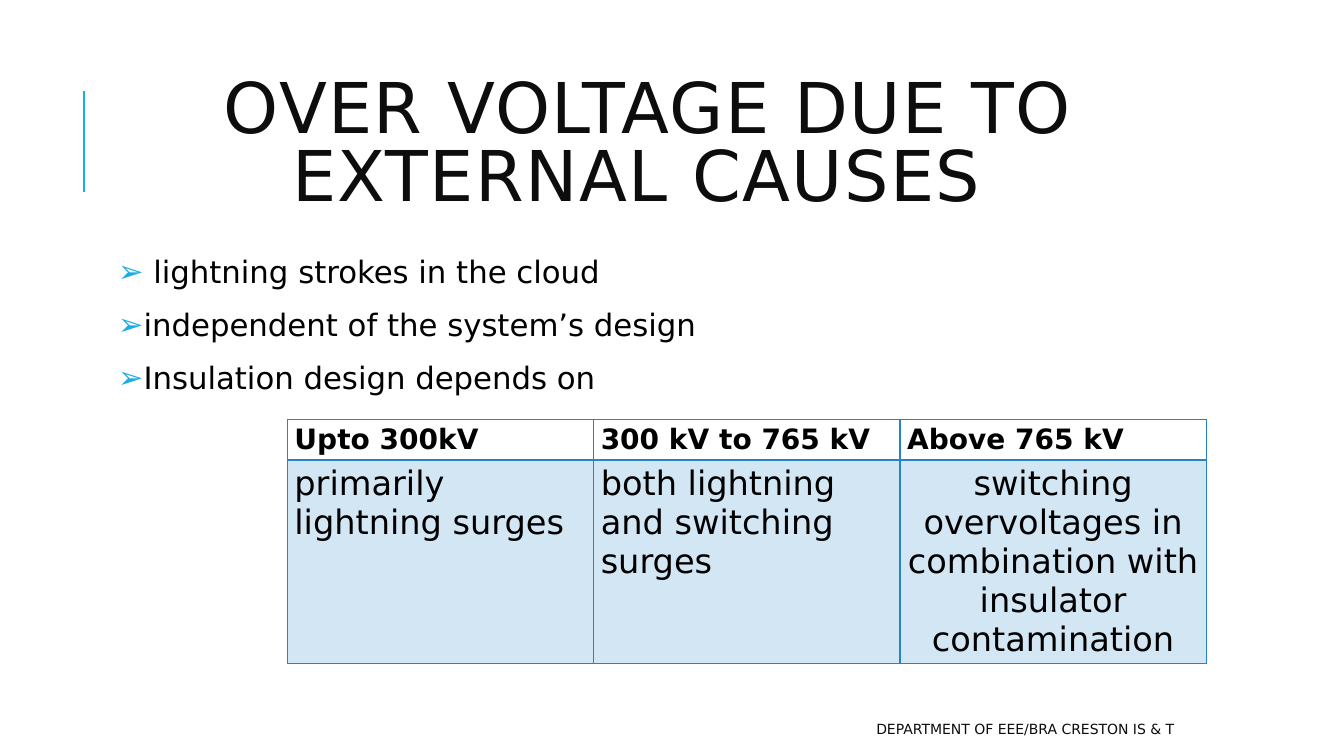
from dataclasses import dataclass

from lxml.etree import SubElement
from pptx import Presentation
from pptx.dml.color import RGBColor
from pptx.enum.shapes import MSO_CONNECTOR
from pptx.enum.text import MSO_ANCHOR, MSO_AUTO_SIZE, PP_ALIGN
from pptx.oxml import parse_xml
from pptx.oxml.ns import nsdecls, qn
from pptx.util import Cm, Pt

TITLE = "OVER VOLTAGE DUE TO EXTERNAL CAUSES "
CAUSES = [
    " lightning strokes in the cloud",
    "independent of the system’s design",
    "Insulation design depends on",
]
VOLTAGE_RANGES = ["Upto 300kV", "300 kV to 765 kV", "Above 765 kV"]
# Each cell: alignment and paragraphs
DESIGN_FACTORS = [
    (PP_ALIGN.LEFT, ["primarily lightning surges"]),
    (PP_ALIGN.LEFT, ["both lightning and switching surges"]),
    (PP_ALIGN.CENTER, ["switching overvoltages in combination with",
                       "insulator contamination"]),
]
FOOTER = "DEPARTMENT OF EEE/BRA CRESTON IS & T"


@dataclass(frozen=True)
class Theme:
    font: str = "DejaVu Sans"
    heading: str = "0D0D0D"
    text: str = "000000"
    accent: str = "1CADE4"
    grid: str = "2683C6"
    title_size: int = 50
    list_size: int = 22
    header_size: int = 20
    cell_size: int = 24
    footer_size: int = 10


THEME = Theme()
LEFT, CONTENT_WIDTH = 2.84, 27
COLUMN_WIDTH, ROW_HEIGHTS = 7.72, (1.02, 5.11)


def place(shape, left, top, width, height):
    shape.left, shape.top = Cm(left), Cm(top)
    shape.width, shape.height = Cm(width), Cm(height)


def add_run(paragraph, text, size, color, bold=False):
    run = paragraph.add_run()
    run.text = text
    run.font.name = THEME.font
    run.font.size = Pt(size)
    run.font.bold = bold
    run.font.color.rgb = RGBColor.from_string(color)
    return run


def paragraphs_for(frame, texts):
    """Yield a paragraph of the frame with each text."""
    for index, text in enumerate(texts):
        yield (frame.add_paragraph() if index else frame.paragraphs[0]), text


def add_bullet(paragraph):
    props = paragraph._p.get_or_add_pPr()
    props.set("marL", str(Cm(0.25)))
    props.set("indent", str(-Cm(0.25)))
    color = SubElement(props, qn("a:buClr"))
    SubElement(color, qn("a:srgbClr"), val=THEME.accent)
    SubElement(props, qn("a:buFont"), typeface=THEME.font)
    SubElement(props, qn("a:buChar"), char="➢")


def set_borders(cell, top, bottom):
    """Draw all four cell edges; top and bottom are widths in points."""
    edges = {"lnL": 1, "lnR": 1, "lnT": top, "lnB": bottom}
    props = cell._tc.get_or_add_tcPr()
    for position, (edge, width) in enumerate(edges.items()):
        props.insert(position, parse_xml(
            f'<a:{edge} {nsdecls("a")} w="{Pt(width)}"><a:solidFill>'
            f'<a:srgbClr val="{THEME.grid}"/></a:solidFill></a:{edge}>'))


def fill_cell(cell, align, texts, size, bold):
    cell.margin_left = cell.margin_right = Cm(0.18)
    cell.margin_top = cell.margin_bottom = Cm(0.1)
    for paragraph, text in paragraphs_for(cell.text_frame, texts):
        paragraph.alignment = align
        add_run(paragraph, text, size, THEME.text, bold)


def add_accent_line(slide):
    line = slide.shapes.add_connector(
        MSO_CONNECTOR.STRAIGHT, Cm(2.12), Cm(4.83), Cm(2.12), Cm(2.29))
    line.line.color.rgb = RGBColor.from_string(THEME.accent)
    line.line.width = Pt(1.5)
    SubElement(line._element.spPr, qn("a:effectLst"))


def add_title(slide):
    title = slide.shapes.title
    place(title, LEFT, 1.63, CONTENT_WIDTH, 4.17)
    frame = title.text_frame
    frame.auto_size = MSO_AUTO_SIZE.NONE
    frame.vertical_anchor = MSO_ANCHOR.MIDDLE
    heading = frame.paragraphs[0]
    heading.alignment = PP_ALIGN.CENTER
    heading.line_spacing = 0.8
    run = add_run(heading, TITLE, THEME.title_size, THEME.heading)
    run.font._element.set("spc", "100")


def add_causes(slide):
    body = slide.placeholders[1]
    place(body, LEFT, 6.35, CONTENT_WIDTH, 11.18)
    frame = body.text_frame
    frame.auto_size = MSO_AUTO_SIZE.NONE
    frame.margin_left = frame.margin_right = Cm(0.13)
    frame.margin_top = frame.margin_bottom = Cm(0.13)
    for paragraph, cause in paragraphs_for(frame, CAUSES):
        paragraph.line_spacing = 0.9
        paragraph.space_before, paragraph.space_after = Pt(12), Pt(2)
        add_bullet(paragraph)
        add_run(paragraph, cause, THEME.list_size, THEME.text)


def add_design_table(slide):
    columns = len(VOLTAGE_RANGES)
    table = slide.shapes.add_table(
        2, columns, Cm(7.24), Cm(10.57),
        Cm(COLUMN_WIDTH * columns), Cm(sum(ROW_HEIGHTS))).table
    table.horz_banding = table.first_row = False
    for row, height in zip(table.rows, ROW_HEIGHTS):
        row.height = Cm(height)
    for column, (voltage, (align, factors)) in enumerate(
            zip(VOLTAGE_RANGES, DESIGN_FACTORS)):
        table.columns[column].width = Cm(COLUMN_WIDTH)
        header, factor = table.cell(0, column), table.cell(1, column)
        fill_cell(header, PP_ALIGN.LEFT, [voltage], THEME.header_size, True)
        header.fill.background()
        set_borders(header, top=1, bottom=2)
        fill_cell(factor, align, factors, THEME.cell_size, False)
        factor.fill.solid()
        factor.fill.fore_color.rgb = RGBColor.from_string(THEME.grid)
        tint = factor._tc.tcPr.find(".//" + qn("a:srgbClr"))
        SubElement(tint, qn("a:alpha"), val="20000")
        set_borders(factor, top=2, bottom=1)


def add_footer(slide):
    footer = slide.shapes.add_textbox(Cm(13.46), Cm(17.98), Cm(16.38), Cm(0.76))
    frame = footer.text_frame
    frame.word_wrap = True
    frame.vertical_anchor = MSO_ANCHOR.MIDDLE
    frame.paragraphs[0].alignment = PP_ALIGN.RIGHT
    add_run(frame.paragraphs[0], FOOTER, THEME.footer_size, THEME.heading)


def main():
    deck = Presentation()
    deck.slide_width, deck.slide_height = Cm(33.87), Cm(19.05)
    slide = deck.slides.add_slide(deck.slide_layouts[1])
    add_accent_line(slide)
    add_title(slide)
    add_causes(slide)
    add_design_table(slide)
    add_footer(slide)
    deck.save("out.pptx")


if __name__ == "__main__":
    main()
